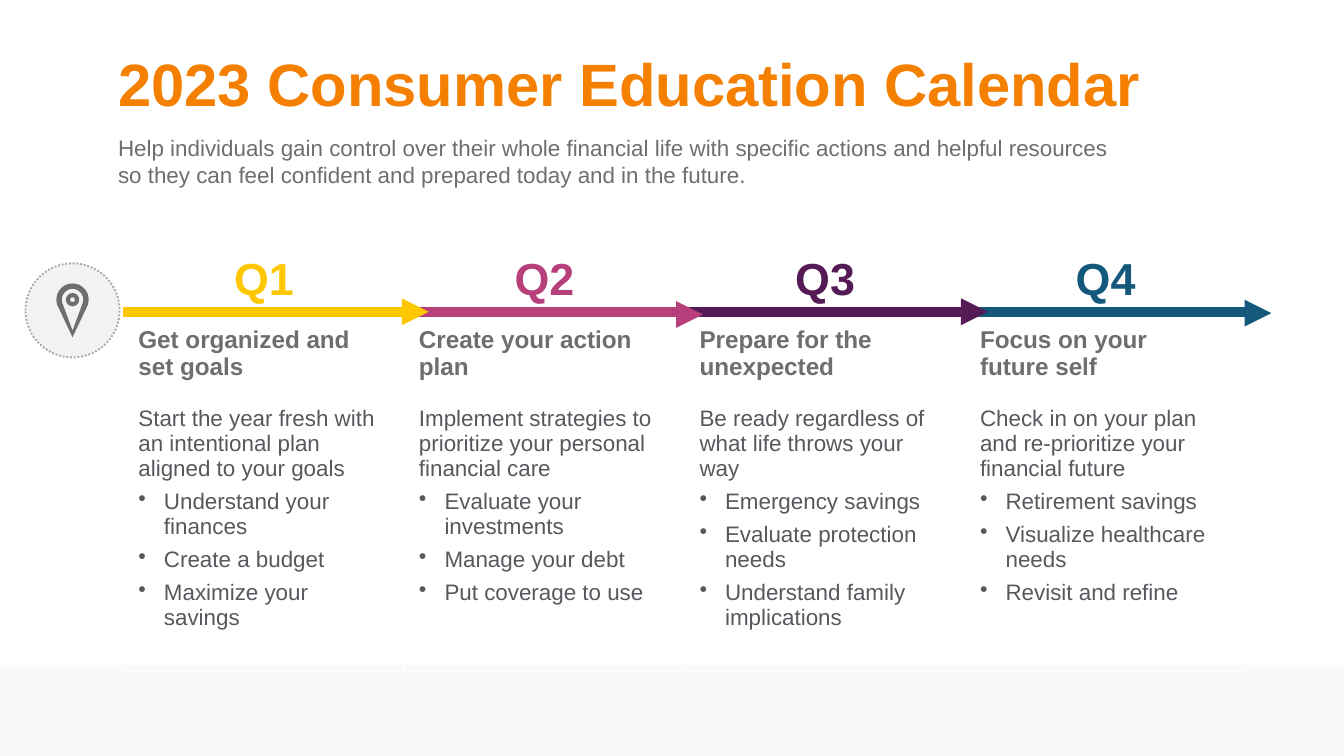
"""Build the 2023 consumer education calendar slide."""
import math
from dataclasses import dataclass

import pptx
import pptx.dml.color
import pptx.enum.dml
import pptx.enum.shapes
import pptx.enum.text
import pptx.oxml
import pptx.oxml.ns
import pptx.util
from pptx.util import Inches

SHAPES = pptx.enum.shapes.MSO_SHAPE
ALIGN = pptx.enum.text.PP_ALIGN
ANCHOR = pptx.enum.text.MSO_ANCHOR


@dataclass(frozen=True)
class Theme:
    font: str = "Arial"
    white: str = "FFFFFF"
    footer: str = "F9F9F9"
    badge: str = "F2F2F2"
    badge_line: str = "A6A6A6"
    title: str = "F58000"
    heading: str = "6E6E6E"
    body: str = "55595D"
    title_size: int = 32
    quarter_size: int = 24
    heading_size: int = 13
    body_size: int = 12


THEME = Theme()

QUARTERS = [
    ("Q1", "FFC700", (2.99, 2.22), "Get organized and set goals",
     "Start the year fresh with an intentional plan aligned to your goals",
     ["Understand your finances", "Create a budget", "Maximize your savings"]),
    ("Q2", "B73F7C", (5.03, 2.24), "Create your action plan",
     "Implement strategies to prioritize your personal financial care",
     ["Evaluate your investments", "Manage your debt", "Put coverage to use"]),
    ("Q3", "551B57", (7.15, 2.22), "Prepare for the unexpected",
     "Be ready regardless of what life throws your way",
     ["Emergency savings", "Evaluate protection needs", "Understand family implications"]),
    ("Q4", "14597B", (9.26, 2.23), "Focus on your future self",
     "Check in on your plan and re-prioritize your financial future",
     ["Retirement savings", "Visualize healthcare needs", "Revisit and refine"]),
]


def rgb(value):
    """Turn a hex string into a colour."""
    return pptx.dml.color.RGBColor.from_string(value)


def write(frame, text, size, color, bold=False, align=ALIGN.LEFT, before=0, after=0,
          bullet=False):
    """Add one formatted paragraph, using the empty first one if it is free."""
    para = frame.paragraphs[0] if not frame.text else frame.add_paragraph()
    para.alignment = align
    para.space_before = pptx.util.Pt(before)
    para.space_after = pptx.util.Pt(after)
    if bullet:
        properties = para._p.get_or_add_pPr()
        properties.set("marL", str(Inches(0.19)))
        properties.set("indent", str(-Inches(0.19)))
        properties.append(pptx.oxml.parse_xml(
            f'<a:buChar {pptx.oxml.ns.nsdecls("a")} char="•"/>'))
    span = para.add_run()
    span.text = text
    span.font.name = THEME.font
    span.font.size = pptx.util.Pt(size)
    span.font.bold = bold
    span.font.color.rgb = rgb(color)


def add_text(page, left, top, width, height, text, **style):
    """Add a wrapping text box."""
    box = page.shapes.add_textbox(Inches(left), Inches(top), Inches(width), Inches(height))
    box.text_frame.word_wrap = True
    write(box.text_frame, text, **style)


def paint(shape, color):
    """Give a shape a flat fill without line or shadow."""
    shape.shadow.inherit = False
    shape.fill.solid()
    shape.fill.fore_color.rgb = rgb(color)
    shape.line.fill.background()


def add_shape(page, kind, left, top, width, height, color):
    """Add a flat preset shape."""
    shape = page.shapes.add_shape(
        kind, Inches(left), Inches(top), Inches(width), Inches(height))
    paint(shape, color)
    return shape


def style_cell(cell, margins, **borders):
    """Set margins, the four borders and an empty fill."""
    cell.margin_left, cell.margin_top, cell.margin_right, cell.margin_bottom = map(Inches, margins)
    properties = cell._tc.get_or_add_tcPr()
    for side in "LRTB":
        color, points = borders.get(side, (THEME.white, 1))
        properties.append(pptx.oxml.parse_xml(
            f'<a:ln{side} {pptx.oxml.ns.nsdecls("a")} w="{pptx.util.Pt(points)}">'
            f'<a:solidFill><a:srgbClr val="{color}"/></a:solidFill></a:ln{side}>'))
    cell.fill.background()


def add_calendar(page):
    """Add the table with one column per quarter."""
    table = page.shapes.add_table(
        2, len(QUARTERS), Inches(0.92), Inches(1.82), Inches(8.35), Inches(3.17)).table
    table.first_row = table.horz_banding = False
    table.rows[0].height, table.rows[1].height = Inches(0.5), Inches(2.67)
    for column, (quarter, color, _, heading, summary, topics) in enumerate(QUARTERS):
        head, body = table.cell(0, column), table.cell(1, column)
        style_cell(head, (0.11, 0.05, 0.11, 0.05), B=(color, 6))
        head.vertical_anchor = ANCHOR.BOTTOM
        write(head.text_frame, quarter, THEME.quarter_size, color, bold=True, align=ALIGN.CENTER)
        style_cell(body, (0.11, 0.11, 0.21, 0.05), T=(color, 6))
        frame = body.text_frame
        write(frame, heading, THEME.heading_size, THEME.heading, bold=True)
        write(frame, summary, THEME.body_size, THEME.body, before=13.4, after=4.2)
        for topic in topics:
            write(frame, topic, THEME.body_size, THEME.body, after=4.2, bullet=True)


def teardrop(radius, tip):
    """Return points of a round head that narrows to a tip."""
    arc = [math.radians(angle) for angle in range(160, 381, 10)]
    head = [(0.54 + radius * math.cos(angle), 2.23 + radius * math.sin(angle)) for angle in arc]
    return [(round(x * 1000), round(y * 1000)) for x, y in head + [(0.54, tip)]]


def add_pin(page):
    """Add the map pin inside its dotted badge."""
    badge = add_shape(page, SHAPES.OVAL, 0.19, 1.96, 0.7, 0.7, THEME.badge)
    badge.line.color.rgb = rgb(THEME.badge_line)
    badge.line.width = pptx.util.Pt(1)
    badge.line.dash_style = pptx.enum.dml.MSO_LINE.ROUND_DOT
    outer, inner = teardrop(0.12, 2.51), teardrop(0.08, 2.46)
    builder = page.shapes.build_freeform(*outer[0], scale=Inches(1) / 1000)
    builder.add_line_segments(outer[1:], close=True)
    builder.move_to(*inner[0])
    builder.add_line_segments(inner[1:], close=True)
    paint(builder.convert_to_shape(), THEME.heading)
    ring = add_shape(page, SHAPES.DONUT, 0.49, 2.18, 0.1, 0.1, THEME.heading)
    ring.adjustments[0] = 0.32


def main():
    """Build and save the deck."""
    deck = pptx.Presentation()
    deck.slide_width, deck.slide_height = Inches(10), Inches(10 * 9 / 16)
    page = deck.slides.add_slide(deck.slide_layouts[6])
    add_shape(page, SHAPES.RECTANGLE, 0, 4.95, 10, 0.68, THEME.footer)
    add_calendar(page)
    add_text(page, 0.78, 0.3, 8.89, 0.64, "2023 Consumer Education Calendar",
             size=THEME.title_size, color=THEME.title, bold=True)
    add_text(page, 0.78, 0.95, 7.78, 0.5,
             "Help individuals gain control over their whole financial life with specific actions "
             "and helpful resources so they can feel confident and prepared today and in the future.",
             size=THEME.body_size, color=THEME.heading)
    for _, color, (left, top), *_ in QUARTERS:
        arrow = add_shape(page, SHAPES.ISOSCELES_TRIANGLE, left, top, 0.2, 0.2, color)
        arrow.rotation = 90
    add_pin(page)
    deck.save("out.pptx")


if __name__ == "__main__":
    main()
